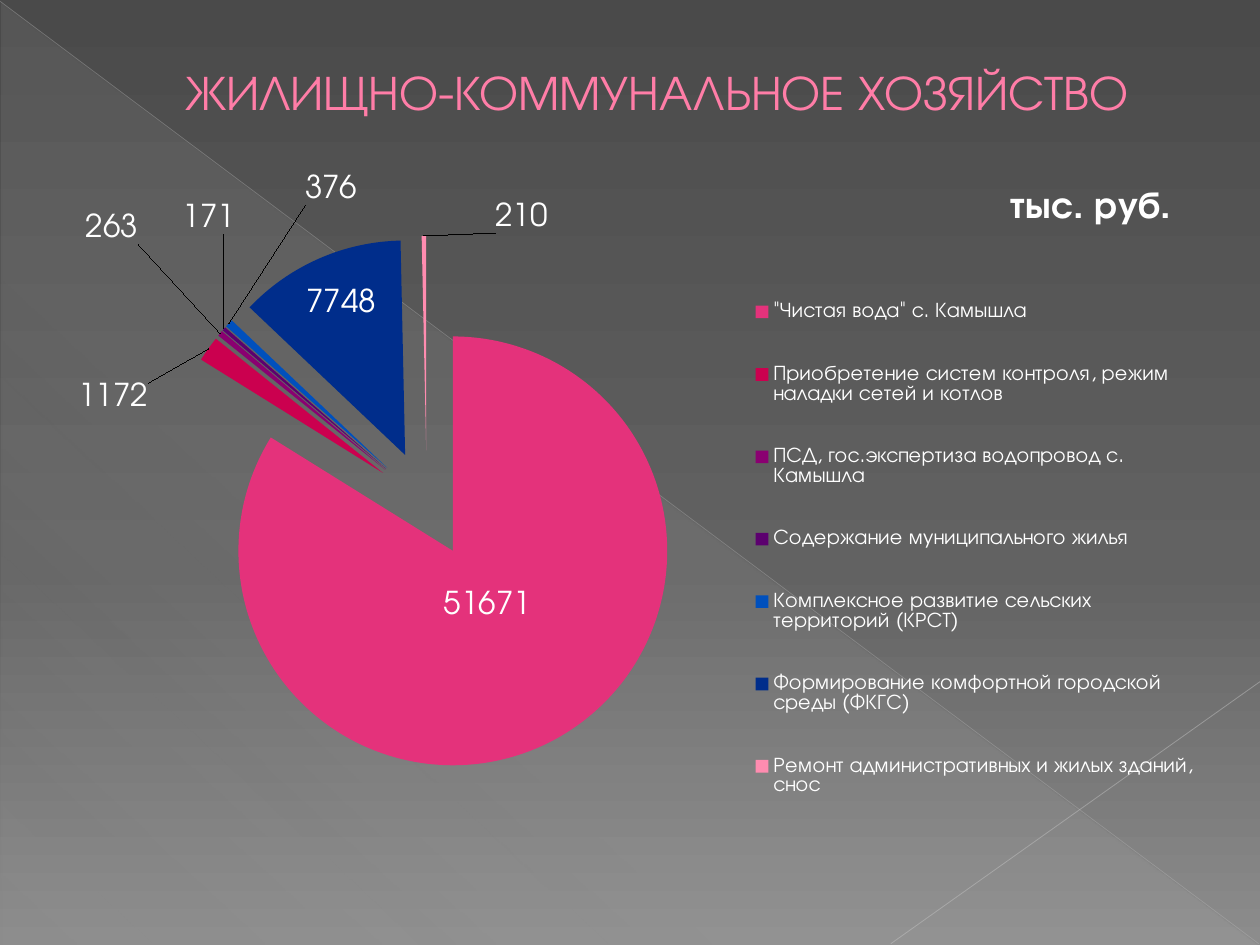
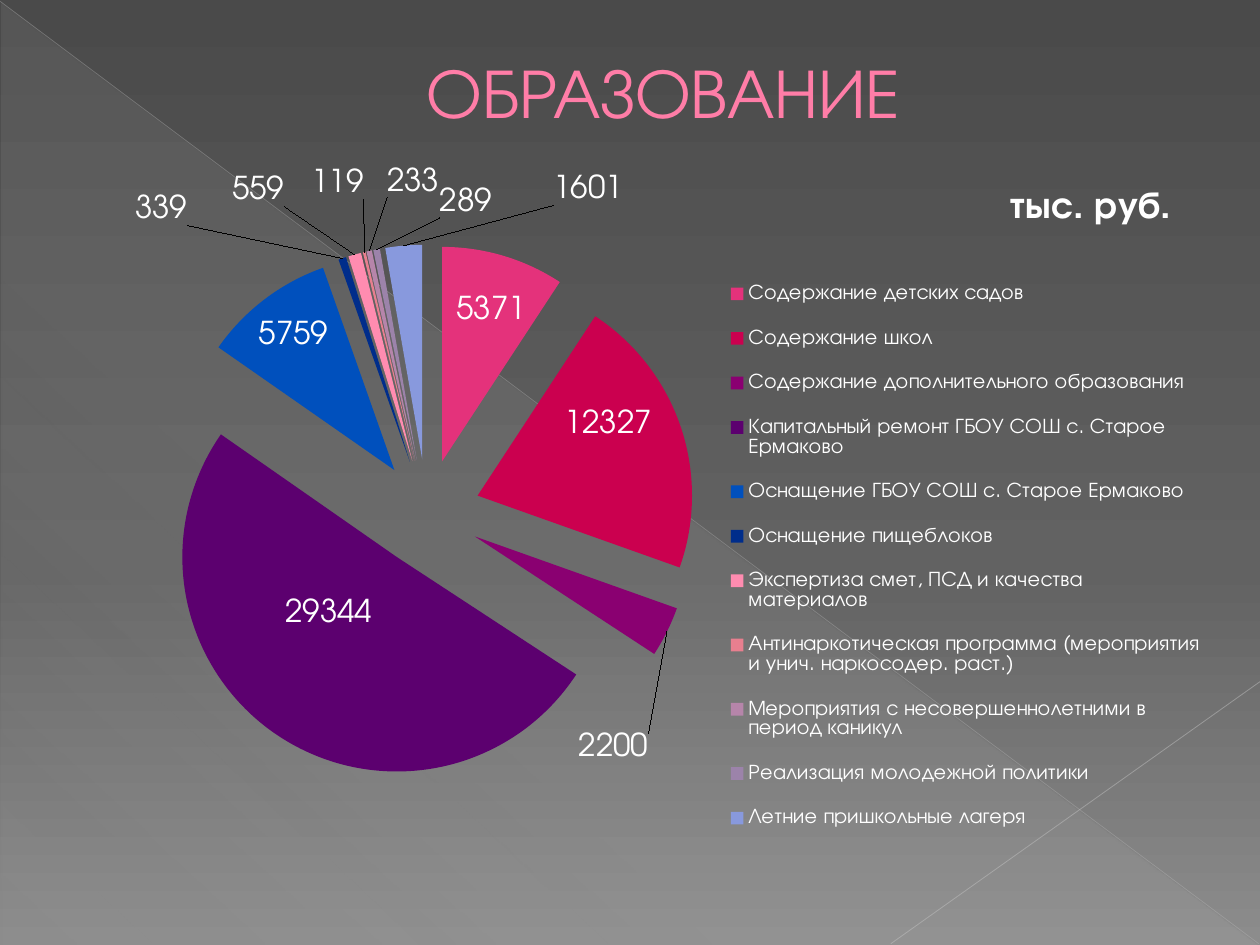
from math import cos, pi, sin

from lxml.etree import SubElement
from pptx import Presentation
from pptx.chart.data import CategoryChartData
from pptx.dml.color import RGBColor
from pptx.enum.chart import XL_CHART_TYPE, XL_LABEL_POSITION, XL_LEGEND_POSITION
from pptx.enum.shapes import MSO_CONNECTOR, MSO_SHAPE
from pptx.enum.text import MSO_ANCHOR, PP_ALIGN
from pptx.oxml.ns import qn
from pptx.util import Inches, Pt

FONT = "TeX Gyre Adventor"
CHART_BOX = (0.35, 1.31, 9.29, 5.75)
EXPLOSION = 25
SLICE_COLORS = ["E4327B", "CB004F", "8A0071", "5C006F", "0050BD", "002D8B",
                "FF8CB0", "E87F8F", "B685AA", "9C83AA", "8899DD"]

HOUSING = [
    ('"Чистая вода" с. Камышла', 51671, (3.87, 4.81)),
    ("Приобретение систем контроля, режим наладки сетей и котлов", 1172, (0.9, 3.16)),
    ("ПСД, гос.экспертиза водопровод с. Камышла", 263, (0.89, 1.82)),
    ("Содержание муниципального жилья", 171, (1.66, 1.74)),
    ("Комплексное развитие сельских территорий (КРСТ)", 376, (2.63, 1.51)),
    ("Формирование комфортной городской среды (ФКГС)", 7748, (2.71, 2.41)),
    ("Ремонт административных и жилых зданий, снос", 210, (4.14, 1.73)),
]
EDUCATION = [
    ("Содержание детских садов", 5371, (3.9, 2.47)),
    ("Содержание школ", 12327, (4.83, 3.37)),
    ("Содержание дополнительного образования", 2200, (4.87, 5.94)),
    ("Капитальный ремонт ГБОУ СОШ с. Старое Ермаково", 29344, (2.61, 4.87)),
    ("Оснащение ГБОУ СОШ с. Старое Ермаково", 5759, (2.33, 2.67)),
    ("Оснащение пищеблоков", 339, (1.28, 1.67)),
    ("Экспертиза смет, ПСД и качества материалов", 559, (2.05, 1.52)),
    ("Антинаркотическая программа (мероприятия и унич. наркосодер. раст.)", 119,
     (2.68, 1.46)),
    ("Мероприятия с несовершеннолетними в период каникул", 233, (3.28, 1.45)),
    ("Реализация молодежной политики", 289, (3.7, 1.61)),
    ("Летние пришкольные лагеря", 1601, (4.67, 1.51)),
]


def rgb(color):
    """Turn a hex string into a colour."""
    return RGBColor.from_string(color)


def set_alpha(clr, percent):
    """Set the opacity of a colour element."""
    SubElement(clr, qn("a:alpha")).set("val", str(percent * 1000))


def set_gradient(fill, root, stops, angle):
    """Give a fill linear gradient stops of (position, colour, opacity)."""
    fill.gradient()
    grad = root.find(".//" + qn("a:gradFill"))
    gs_list = grad.find(qn("a:gsLst"))
    for gs in list(gs_list):
        gs_list.remove(gs)
    for pos, color, opacity in stops:
        gs = SubElement(gs_list, qn("a:gs"), pos=str(pos * 1000))
        clr = SubElement(gs, qn("a:srgbClr"), val=color)
        if opacity < 100:
            set_alpha(clr, opacity)
    grad.find(qn("a:lin")).set("ang", str(angle * 60000))


def set_layout(parent, index, **values):
    """Place a chart part by fractions of the chart size."""
    for old in parent.findall(qn("c:layout")):
        parent.remove(old)
    layout = SubElement(parent, qn("c:layout"))
    parent.insert(index, layout)
    manual = SubElement(layout, qn("c:manualLayout"))
    for tag, value in values.items():
        text = value if isinstance(value, str) else f"{value:.4f}"
        SubElement(manual, qn("c:" + tag)).set("val", text)


class Deck:
    """Hold the shared style and the current slide."""

    def __init__(self):
        """Start an empty deck."""
        self.prs = Presentation()
        self.prs.slide_width, self.prs.slide_height = Inches(10), Inches(7.5)
        self.s = None

    def slide(self):
        """Add a slide with the shared background."""
        self.s = self.prs.slides.add_slide(self.prs.slide_layouts[6])
        set_gradient(self.s.background.fill, self.s.element,
                     [(0, "4A4A4A", 100), (60, "626262", 100), (100, "8C8C8C", 100)], 90)
        self.triangle(0.01, 0.02, 9.98, 7.48)
        self.line(0, 0.01, 9.99, 7.49, "BFBFBF", 0.39, 35)
        self.line(10, 5.41, 7.07, 7.49, "C6C6C6", 0.47, 45)

    def triangle(self, *box):
        """Add the translucent corner triangle."""
        sp = self.s.shapes.add_shape(MSO_SHAPE.RIGHT_TRIANGLE, *map(Inches, box))
        sp.shadow.inherit = False
        sp.line.fill.background()
        set_gradient(sp.fill, sp.element,
                     [(0, "D2D2D2", 10), (70, "D2D2D2", 8), (100, "D2D2D2", 1)], 133)

    def line(self, x1, y1, x2, y2, color, width, opacity):
        """Add a thin translucent line."""
        sp = self.s.shapes.add_connector(MSO_CONNECTOR.STRAIGHT,
                                         *map(Inches, (x1, y1, x2, y2)))
        sp.line.color.rgb = rgb(color)
        sp.line.width = Pt(width)
        set_alpha(sp.element.find(".//" + qn("a:srgbClr")), opacity)
        SubElement(sp.element.spPr, qn("a:effectLst"))

    def font(self, font, size, color="FFFFFF", bold=False):
        """Style a font."""
        font.name, font.size, font.bold = FONT, Pt(size), bold
        font.color.rgb = rgb(color)

    def title(self, text, size):
        """Add the slide title."""
        sp = self.s.shapes.add_textbox(*map(Inches, (0.5, 0.29, 9, 0.86)))
        tf = sp.text_frame
        tf.word_wrap = True
        tf.vertical_anchor = MSO_ANCHOR.MIDDLE
        p = tf.paragraphs[0]
        p.alignment = PP_ALIGN.CENTER
        p._p.get_or_add_pPr().set("marL", str(Inches(0.53)))
        r = p.add_run()
        r.text = text
        self.font(r.font, size, "FF7DA7")
        ln = SubElement(r.font._element, qn("a:ln"), w=str(Pt(0.5)))
        fill = SubElement(ln, qn("a:solidFill"))
        SubElement(fill, qn("a:srgbClr"), val="B12761")
        r.font._element.insert(0, ln)

    def pie(self, rows, plot, legend):
        """Add an exploded pie of (category, value, label centre) rows."""
        data = CategoryChartData()
        data.categories = [name for name, _, _ in rows]
        data.add_series("Series 1", [value for _, value, _ in rows])
        chart = self.s.shapes.add_chart(XL_CHART_TYPE.PIE, *map(Inches, CHART_BOX),
                                        data).chart
        self.font(chart.font, 18)
        area = chart.element.find(".//" + qn("c:plotArea"))
        self.place(area, 0, plot, layoutTarget="inner")
        self.chart_title(chart, "тыс. руб.")
        chart.has_legend = True
        chart.legend.position = XL_LEGEND_POSITION.RIGHT
        chart.legend.include_in_layout = False
        self.font(chart.legend.font, 12)
        self.place(chart.element.find(".//" + qn("c:legend")), 1, legend)
        chart.plots[0].vary_by_categories = True
        self.slices(chart.plots[0].series[0], rows, plot)

    def place(self, parent, index, box, **extra):
        """Fix the box of a chart part."""
        set_layout(parent, index, **extra, xMode="edge", yMode="edge",
                   **dict(zip("xywh", box)))

    def chart_title(self, chart, text):
        """Add the unit caption of a chart."""
        chart.has_title = True
        r = chart.chart_title.text_frame.paragraphs[0].add_run()
        r.text = text
        self.font(r.font, 21.6, bold=True)
        chart.chart_title.include_in_layout = False
        set_layout(chart.chart_title._element, 1, xMode="edge", yMode="edge",
                   x=0.82, y=0.02)

    def slices(self, ser, rows, plot):
        """Colour the slices and move each label to its centre."""
        left, top, width, height = CHART_BOX
        x, y, w, h = plot
        cx, cy = left + width * (x + w / 2), top + height * (y + h / 2)
        explode = EXPLOSION / 100
        radius = height * h / 2 / (1 + explode)
        labels = ser.data_labels
        labels.show_value = True
        labels.position = XL_LABEL_POSITION.CENTER
        self.font(labels.font, 18)
        explosion = SubElement(ser._element, qn("c:explosion"), val=str(EXPLOSION))
        ser._element.find(qn("c:tx")).addnext(explosion)
        total, done = sum(value for _, value, _ in rows), 0
        for i, (_, value, (lx, ly)) in enumerate(rows):
            point = ser.points[i]
            point.format.fill.solid()
            point.format.fill.fore_color.rgb = rgb(SLICE_COLORS[i])
            point.format.line.fill.background()
            angle = 2 * pi * (done + value / 2) / total
            done += value
            reach = radius * (0.5 + explode)
            label = point.data_label
            self.font(label.font, 18)
            label.position = XL_LABEL_POSITION.CENTER
            set_layout(label._dLbl, 1, x=(lx - cx - reach * sin(angle)) / width,
                       y=(ly - cy + reach * cos(angle)) / height)


def main():
    """Build the two budget slides."""
    deck = Deck()
    deck.slide()
    deck.title("ЖИЛИЩНО-КОММУНАЛЬНОЕ ХОЗЯЙСТВО ", 28)
    deck.pie(HOUSING, (0.007, 0.098, 0.64, 0.74), (0.6, 0.13, 0.39, 0.8))
    deck.slide()
    deck.title("ОБРАЗОВАНИЕ", 40)
    deck.pie(EDUCATION, (0.007, 0.11, 0.64, 0.74), (0.585, 0.13, 0.405, 0.82))
    deck.prs.save("out.pptx")


if __name__ == "__main__":
    main()
